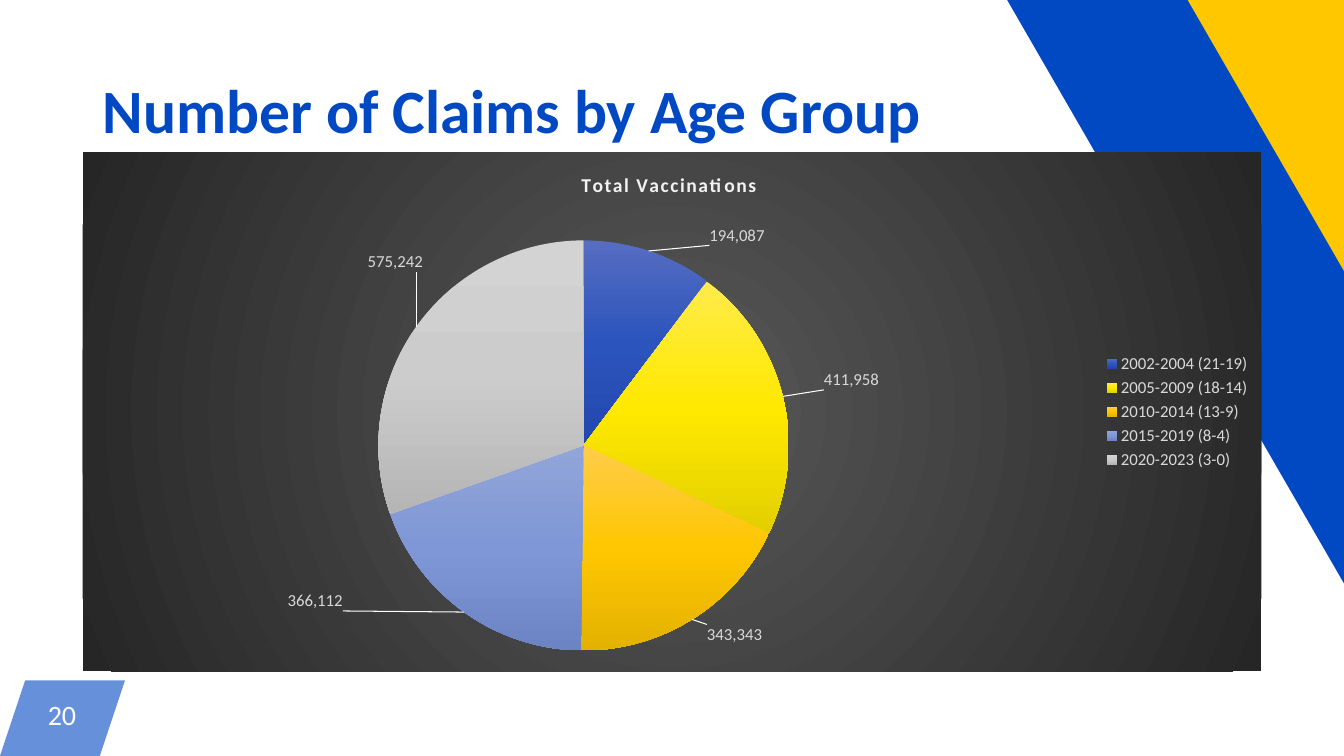
import pptx
import pptx.chart.data
import pptx.dml.color
import pptx.enum.chart
import pptx.enum.text
import pptx.oxml
import pptx.oxml.ns
import pptx.util
from pptx.util import Inches

FONT = "Calibri"
BLUE, YELLOW, WHITE, PALE = "0049C2", "FFC700", "FFFFFF", "D9D9D9"
TITLE = "Number of Claims by Age Group"
CHART_TITLE = "Total Vaccinations"
PAGE_NUMBER = "20"
AGE_GROUPS = [
    ("2002-2004 (21-19)", 194087, ("566DC1", "2C54BD", "2248AD"), (0.05, 0)),
    ("2005-2009 (18-14)", 411958, ("FFEB4B", "FFE900", "E3CF00"), (0.03, -0.01)),
    ("2010-2014 (13-9)", 343343, ("FFCC4B", "FFC700", "E3B100"), (0.01, 0)),
    ("2015-2019 (8-4)", 366112, ("92A5D8", "7F97D6", "6C84C3"), (-0.1, -0.05)),
    ("2020-2023 (3-0)", 575242, ("D3D3D3", "CCCCCC", "B5B5B5"), (0.01, -0.1)),
]
BANDS = [
    (YELLOW, 100, [(10.47, -2.17), (12.18, -3.15), (17.06, 5.36), (15.35, 6.33)]),
    (BLUE, 100, [(9.47, -0.9), (10.81, -1.68), (15.71, 6.82), (14.37, 7.59)]),
    (BLUE, 60, [(0.25, 6.75), (1.24, 6.75), (0.99, 7.5), (0, 7.5)]),
]


def color(value):
    return pptx.dml.color.RGBColor.from_string(value)


def element(tag, content):
    prefixes = pptx.oxml.ns.nsdecls("a", "c")
    return pptx.oxml.parse_xml(f"<{tag} {prefixes}>{content}</{tag}>")


def gradient(colors, direction):
    step = 100000 // (len(colors) - 1)
    stops = "".join(
        f'<a:gs pos="{index * step}"><a:srgbClr val="{value}"/></a:gs>'
        for index, value in enumerate(colors)
    )
    return element("a:gradFill", f"<a:gsLst>{stops}</a:gsLst>{direction}")


def manual_layout(x, y, width=None, height=None, edge=False):
    inner = '<c:layoutTarget val="inner"/>' if width else ""
    modes = '<c:xMode val="edge"/><c:yMode val="edge"/>' if edge else ""
    size = f'<c:w val="{width}"/><c:h val="{height}"/>' if width else ""
    place = f'<c:x val="{x}"/><c:y val="{y}"/>'
    return element("c:layout", f"<c:manualLayout>{inner}{modes}{place}{size}</c:manualLayout>")


def format_font(font, size, value, bold=False):
    font.name = FONT
    font.size = pptx.util.Pt(size)
    font.bold = bold
    font.color.rgb = color(value)


def add_text(slide, text, *, box, size, value, bold=False, align="LEFT", inset=None, spacing=None):
    frame = slide.shapes.add_textbox(*map(Inches, box)).text_frame
    frame.word_wrap = True
    frame.vertical_anchor = pptx.enum.text.MSO_ANCHOR.MIDDLE
    if inset is not None:
        frame.margin_left = frame.margin_right = Inches(inset)
        frame.margin_top = frame.margin_bottom = Inches(inset)
    paragraph = frame.paragraphs[0]
    paragraph.alignment = getattr(pptx.enum.text.PP_ALIGN, align)
    paragraph.line_spacing = spacing
    run = paragraph.add_run()
    run.text = text
    format_font(run.font, size, value, bold)


def add_band(slide, value, opacity, points):
    corners = [(Inches(x), Inches(y)) for x, y in points]
    builder = slide.shapes.build_freeform(*corners[0])
    builder.add_line_segments(corners[1:], close=True)
    shape = builder.convert_to_shape()
    shape.shadow.inherit = False
    shape.fill.solid()
    shape.fill.fore_color.rgb = color(value)
    shape.line.fill.background()
    if opacity < 100:
        fill_color = shape._element.xpath("p:spPr/a:solidFill/a:srgbClr")[0]
        fill_color.append(pptx.oxml.parse_xml(
            f'<a:alpha {pptx.oxml.ns.nsdecls("a")} val="{opacity * 1000}"/>'))


def add_claims_chart(slide):
    data = pptx.chart.data.CategoryChartData(number_format="#,##0")
    data.categories = [group[0] for group in AGE_GROUPS]
    data.add_series("Series 1", [group[1] for group in AGE_GROUPS])
    chart = slide.shapes.add_chart(
        pptx.enum.chart.XL_CHART_TYPE.PIE,
        Inches(0.82), Inches(1.51), Inches(11.69), Inches(5.15), data,
    ).chart
    format_font(chart.font, 12, PALE)

    background = element("c:spPr", "<a:ln><a:noFill/></a:ln>")
    background.insert(0, gradient(
        ("595959", "262626"),
        '<a:path path="circle"><a:fillToRect l="50000" t="50000" r="50000" b="50000"/></a:path>'))
    chart._chartSpace.xpath("c:chart")[0].addnext(background)

    chart.has_title = True
    run = chart.chart_title.text_frame.paragraphs[0].add_run()
    run.text = CHART_TITLE
    format_font(run.font, 14, "F2F2F2", True)
    run._r.get_or_add_rPr().set("spc", "100")
    title = chart.chart_title._element
    for layout in title.xpath("c:layout"):
        title.remove(layout)
    title.xpath("c:tx")[0].addnext(manual_layout(0.42, 0.03, edge=True))

    chart.has_legend = True
    chart.legend.position = pptx.enum.chart.XL_LEGEND_POSITION.RIGHT
    chart.legend.include_in_layout = False
    format_font(chart.legend.font, 12, PALE)

    plot_area = chart._chartSpace.xpath("c:chart/c:plotArea")[0]
    for layout in plot_area.xpath("c:layout"):
        plot_area.remove(layout)
    plot_area.insert(0, manual_layout(0.25, 0.17, 0.35, 0.79, edge=True))

    best_fit = pptx.enum.chart.XL_LABEL_POSITION.BEST_FIT
    series = chart.plots[0].series[0]
    labels = series.data_labels
    labels.show_value = True
    labels.number_format = "#,##0"
    labels.number_format_is_linked = False
    labels.position = best_fit
    format_font(labels.font, 12, PALE)
    for index, (_, _, colors, offset) in enumerate(AGE_GROUPS):
        point = series.points[index]
        point.format.fill.solid()
        solid = series._element.xpath(f"c:dPt[c:idx/@val={index}]/c:spPr/a:solidFill")[0]
        solid.getparent().replace(solid, gradient(colors, '<a:lin ang="5400000" scaled="0"/>'))
        point.format.line.fill.background()
        format_font(point.data_label.font, 12, PALE)
        point.data_label.position = best_fit
        label = series._element.xpath(f"c:dLbls/c:dLbl[c:idx/@val={index}]")[0]
        label.xpath("c:idx")[0].addnext(manual_layout(*offset))

    for leader in series._element.xpath("c:dLbls/c:showLeaderLines"):
        leader.set("val", "1")
        leader.addnext(element(
            "c:leaderLines",
            f'<c:spPr><a:ln w="9525"><a:solidFill><a:srgbClr val="{WHITE}"/></a:solidFill></a:ln></c:spPr>'))


def main():
    presentation = pptx.Presentation()
    presentation.slide_width = Inches(13.33)
    presentation.slide_height = Inches(7.5)
    slide = presentation.slides.add_slide(presentation.slide_layouts[6])
    for band in BANDS:
        add_band(slide, *band)
    add_text(slide, PAGE_NUMBER, box=(0.25, 6.75, 0.73, 0.75), size=20, value=WHITE,
             align="CENTER", inset=0.04, spacing=pptx.util.Pt(17.7))
    add_text(slide, TITLE, box=(0.92, 0.4, 11.5, 1.45), size=44, value=BLUE,
             bold=True, spacing=0.9)
    add_claims_chart(slide)
    presentation.save("out.pptx")


if __name__ == "__main__":
    main()
